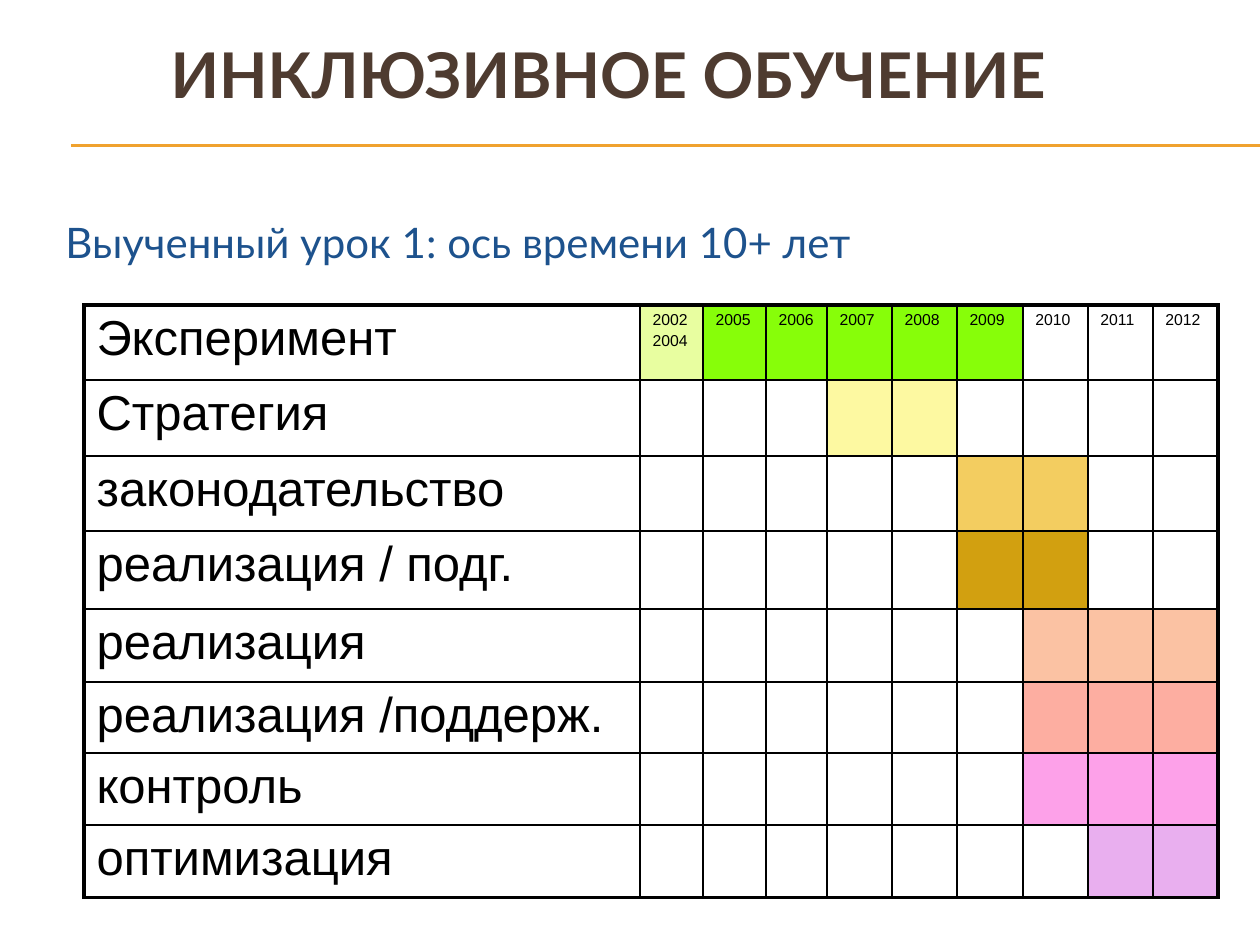
from lxml.etree import SubElement as Sub
from pptx import Presentation
from pptx.dml.color import RGBColor as Rgb
from pptx.enum.shapes import MSO_CONNECTOR as Conn
from pptx.enum.text import MSO_ANCHOR as Anchor
from pptx.oxml.ns import qn
from pptx.util import Pt

TITLE = "ИНКЛЮЗИВНОЕ ОБУЧЕНИЕ"
LESSON = "Выученный урок 1: ось времени 10+ лет"
HEX = {"title": "4E3B30", "lesson": "1D528D", "rule": "F0A22E",
       "ink": "000000", "pale": "E8FEA0", "lime": "87FE09",
       "cream": "FDF9A1", "sand": "F3CD60", "gold": "D2A010",
       "peach": "FBC2A3", "coral": "FDAEA1", "pink": "FDA1E9",
       "lilac": "E9AFEF"}
YEARS = ["2002\n2004", "2005", "2006", "2007", "2008", "2009",
         "2010", "2011", "2012"]
STAGES = [
    ("Эксперимент", [("pale", 1, 1), ("lime", 2, 6)]),
    ("Стратегия", [("cream", 4, 5)]),
    ("законодательство", [("sand", 6, 7)]),
    ("реализация / подг.", [("gold", 6, 7)]),
    ("реализация", [("peach", 7, 9)]),
    ("реализация /поддерж.", [("coral", 7, 9)]),
    ("контроль", [("pink", 7, 9)]),
    ("оптимизация", [("lilac", 8, 9)]),
]
WIDTHS = [556, 63, 63, 61, 65, 65, 66, 65, 65, 65]
HEIGHTS = [75, 76, 75, 78, 73, 71, 72, 73]
RULES = [145, 146]


def px(n):
    return round(n * 914400 / 126)


def write(frame, text, size, color, font="Arial", bold=False):
    for i, line in enumerate(text.split("\n")):
        para = frame.add_paragraph() if i else frame.paragraphs[0]
        if i:
            para.space_before = Pt(size * 0.2)
        run = para.add_run()
        run.text = line
        run.font.size = Pt(size)
        run.font.name = font
        run.font.bold = bold
        run.font.color.rgb = Rgb.from_string(HEX[color])


def edge(cell, side, width):
    line = Sub(cell._tc.get_or_add_tcPr(), qn("a:" + side), w=str(Pt(width)))
    fill = Sub(line, qn("a:solidFill"))
    Sub(fill, qn("a:srgbClr"), val=HEX["ink"])


def style(cell, row, col, color):
    outer = {"lnL": col == 0, "lnR": col == len(WIDTHS) - 1,
             "lnT": row == 0, "lnB": row == len(HEIGHTS) - 1}
    for side, thick in outer.items():
        edge(cell, side, 2.25 if thick else 1)
    if color:
        cell.fill.solid()
        cell.fill.fore_color.rgb = Rgb.from_string(HEX[color])
    else:
        cell.fill.background()


def rule(slide, y):
    line = slide.shapes.add_connector(Conn.STRAIGHT, px(71), px(y), px(1260), px(y))
    line.line.color.rgb = Rgb.from_string(HEX["rule"])
    line.line.width = Pt(0.75)
    Sub(line._element.spPr, qn("a:effectLst"))


def chart(slide):
    table = slide.shapes.add_table(
        len(HEIGHTS), len(WIDTHS), px(84), px(305),
        px(sum(WIDTHS)), px(sum(HEIGHTS))).table
    table.first_row = table.horz_banding = False
    for col, width in zip(table.columns, WIDTHS):
        col.width = px(width)
    for r, (name, spans) in enumerate(STAGES):
        table.rows[r].height = px(HEIGHTS[r])
        fills = {c: key for key, a, b in spans for c in range(a, b + 1)}
        for c in range(len(WIDTHS)):
            cell = table.cell(r, c)
            style(cell, r, c, fills.get(c))
            if c == 0:
                write(cell.text_frame, name, 28, "ink")
            elif r == 0:
                write(cell.text_frame, YEARS[c - 1], 9, "ink")


def main():
    deck = Presentation()
    deck.slide_width, deck.slide_height = px(1260), px(945)
    slide = deck.slides.add_slide(deck.slide_layouts[5])
    for y in RULES:
        rule(slide, y)
    title = slide.shapes.title
    title.left, title.top, title.width, title.height = map(px, (158, 0, 1102, 147))
    title.text_frame.vertical_anchor = Anchor.MIDDLE
    write(title.text_frame, TITLE, 36, "title", font="Lato", bold=True)
    title.text_frame.paragraphs[0].alignment = 1
    chart(slide)
    box = slide.shapes.add_textbox(px(53), px(210), px(1092), px(64))
    box.text_frame.word_wrap = True
    write(box.text_frame, LESSON, 24, "lesson", font="Lato")
    deck.save("out.pptx")


if __name__ == "__main__":
    main()
